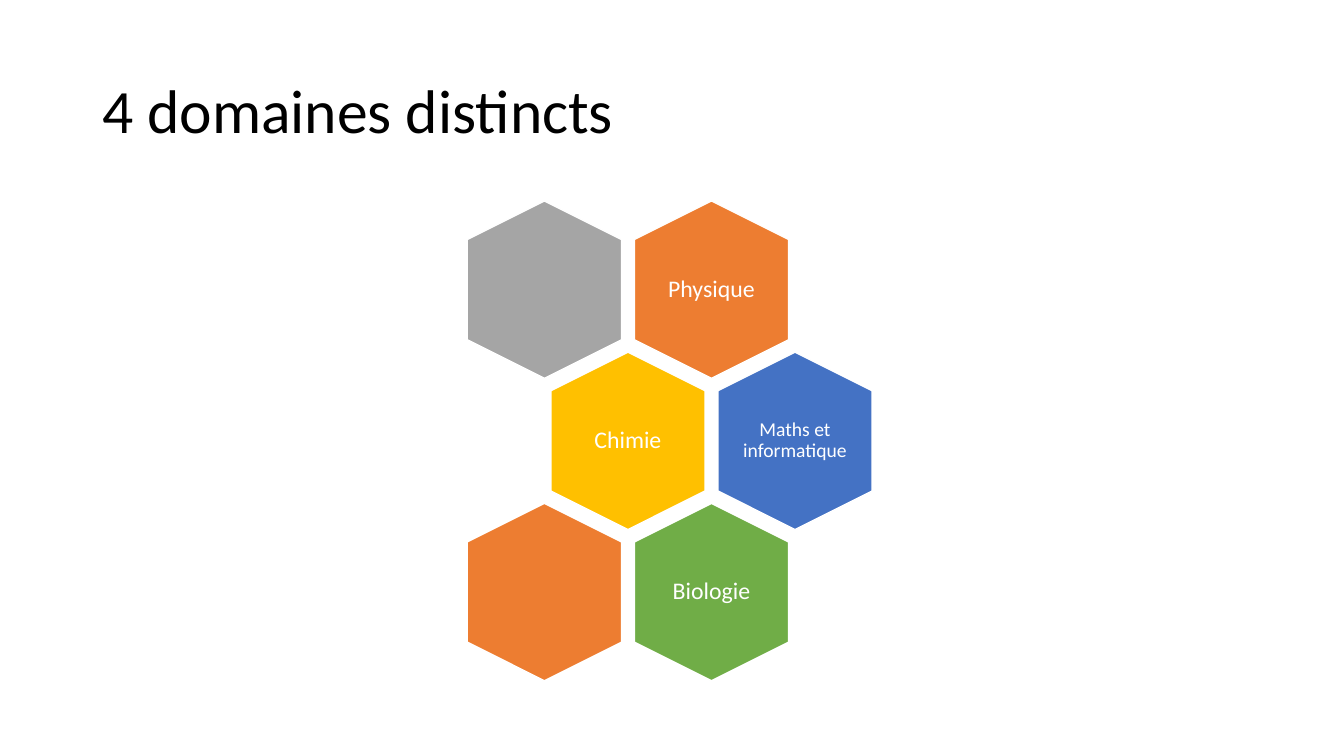
from pptx import Presentation
from pptx.dml.color import RGBColor
from pptx.enum.shapes import MSO_SHAPE
from pptx.enum.text import MSO_ANCHOR, PP_ALIGN
from pptx.util import Cm, Pt

HEXAGON = MSO_SHAPE.HEXAGON
MIDDLE = MSO_ANCHOR.MIDDLE
LEFT, CENTER = PP_ALIGN.LEFT, PP_ALIGN.CENTER

BLACK = RGBColor(0x00, 0x00, 0x00)
WHITE = RGBColor(0xFF, 0xFF, 0xFF)
ORANGE = RGBColor(0xED, 0x7D, 0x31)
GRAY = RGBColor(0xA5, 0xA5, 0xA5)
GOLD = RGBColor(0xFF, 0xC0, 0x00)
BLUE = RGBColor(0x44, 0x72, 0xC4)
GREEN = RGBColor(0x70, 0xAD, 0x47)

HEX_LENGTH, HEX_BREADTH = 4.47, 3.89
LABEL_WIDTH, LABEL_HEIGHT = 2.69, 3.07
FIRST_X, FIRST_Y = 13.72, 7.3
COLUMN_STEP, ROW_STEP = 4.21, 3.81

DOMAINS = [
    (0, 1, ORANGE, "Physique", 17, 0.17),
    (0, 0, GRAY, None, None, None),
    (1, 0, GOLD, "Chimie", 17, 0.17),
    (1, 1, BLUE, "Maths et informatique", 14, 0),
    (2, 1, GREEN, "Biologie", 17, 0.17),
    (2, 0, ORANGE, None, None, None),
]


class DomainSlide:
    font_name = "Calibri"

    def __init__(self, deck):
        self.page = deck.slides.add_slide(deck.slide_layouts[6])

    def text(self, left, top, width, height, words, size, color, align, inset_x, inset_y):
        box = self.page.shapes.add_textbox(Cm(left), Cm(top), Cm(width), Cm(height))
        frame = box.text_frame
        frame.word_wrap = True
        frame.vertical_anchor = MIDDLE
        frame.margin_left = frame.margin_right = Cm(inset_x)
        frame.margin_top = frame.margin_bottom = Cm(inset_y)
        para = frame.paragraphs[0]
        para.text = words
        para.alignment = align
        para.line_spacing = 0.9
        para.font.name = self.font_name
        para.font.size = Pt(size)
        para.font.color.rgb = color

    def hexagon(self, center_x, center_y, color):
        shape = self.page.shapes.add_shape(
            HEXAGON,
            Cm(center_x - HEX_LENGTH / 2),
            Cm(center_y - HEX_BREADTH / 2),
            Cm(HEX_LENGTH),
            Cm(HEX_BREADTH),
        )
        shape.rotation = 90
        shape.adjustments[0] = 0.25
        shape.shadow.inherit = False
        shape.fill.solid()
        shape.fill.fore_color.rgb = color
        shape.line.color.rgb = WHITE
        shape.line.width = Pt(1)

    def label(self, center_x, center_y, words, size, inset):
        self.text(
            center_x - LABEL_WIDTH / 2, center_y - LABEL_HEIGHT / 2,
            LABEL_WIDTH, LABEL_HEIGHT, words, size, WHITE, CENTER, inset, inset,
        )


def main():
    deck = Presentation()
    deck.slide_width, deck.slide_height = Cm(33.87), Cm(19.05)
    slide = DomainSlide(deck)
    slide.text(2.33, 1.01, 29.21, 3.68, "4 domaines distincts", 44, BLACK, LEFT, 0.25, 0.13)
    for row, column, color, words, size, inset in DOMAINS:
        center_x = FIRST_X + (column + row % 2 / 2) * COLUMN_STEP
        center_y = FIRST_Y + row * ROW_STEP
        slide.hexagon(center_x, center_y, color)
        if words:
            slide.label(center_x, center_y, words, size, inset)
    deck.save("out.pptx")


if __name__ == "__main__":
    main()
